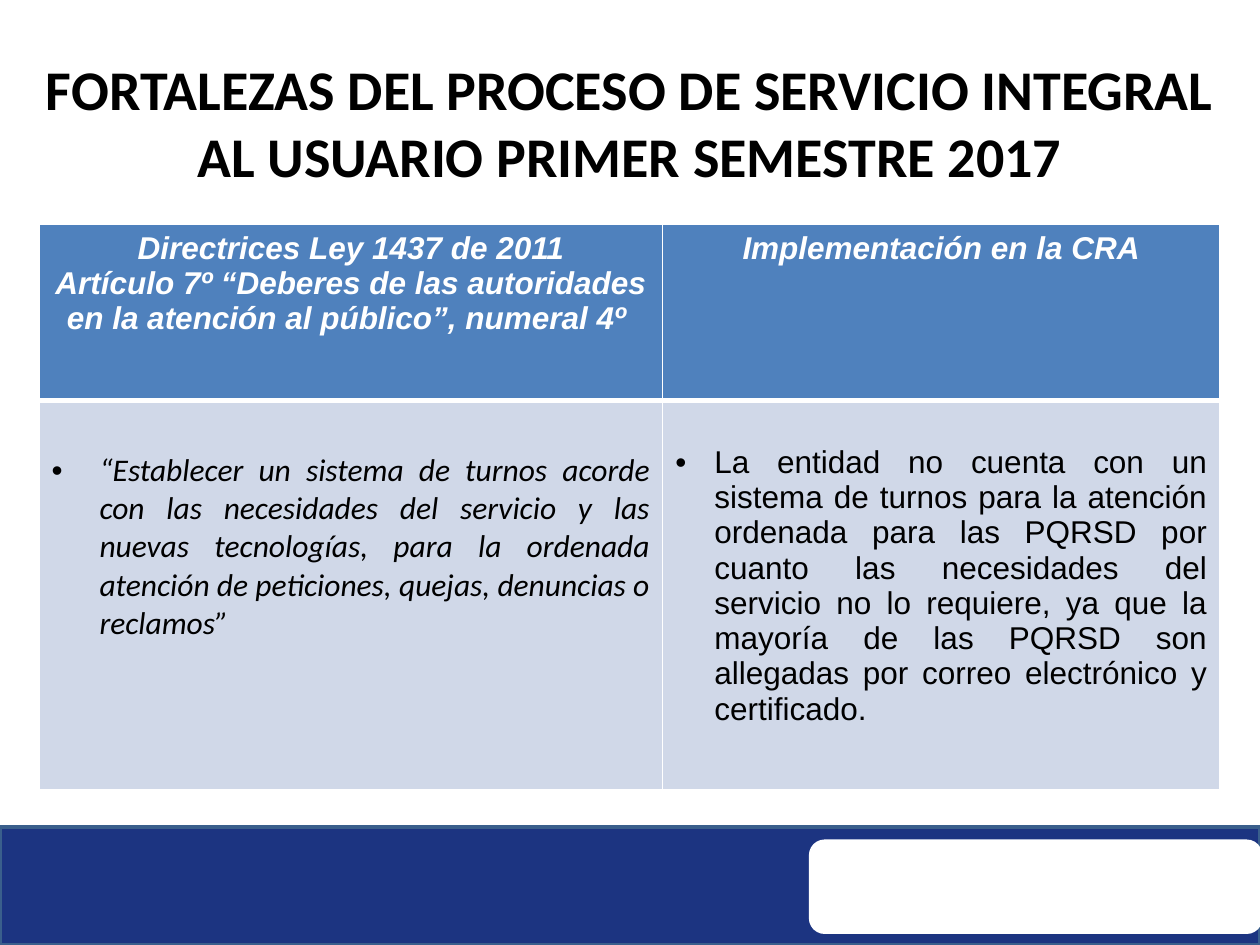
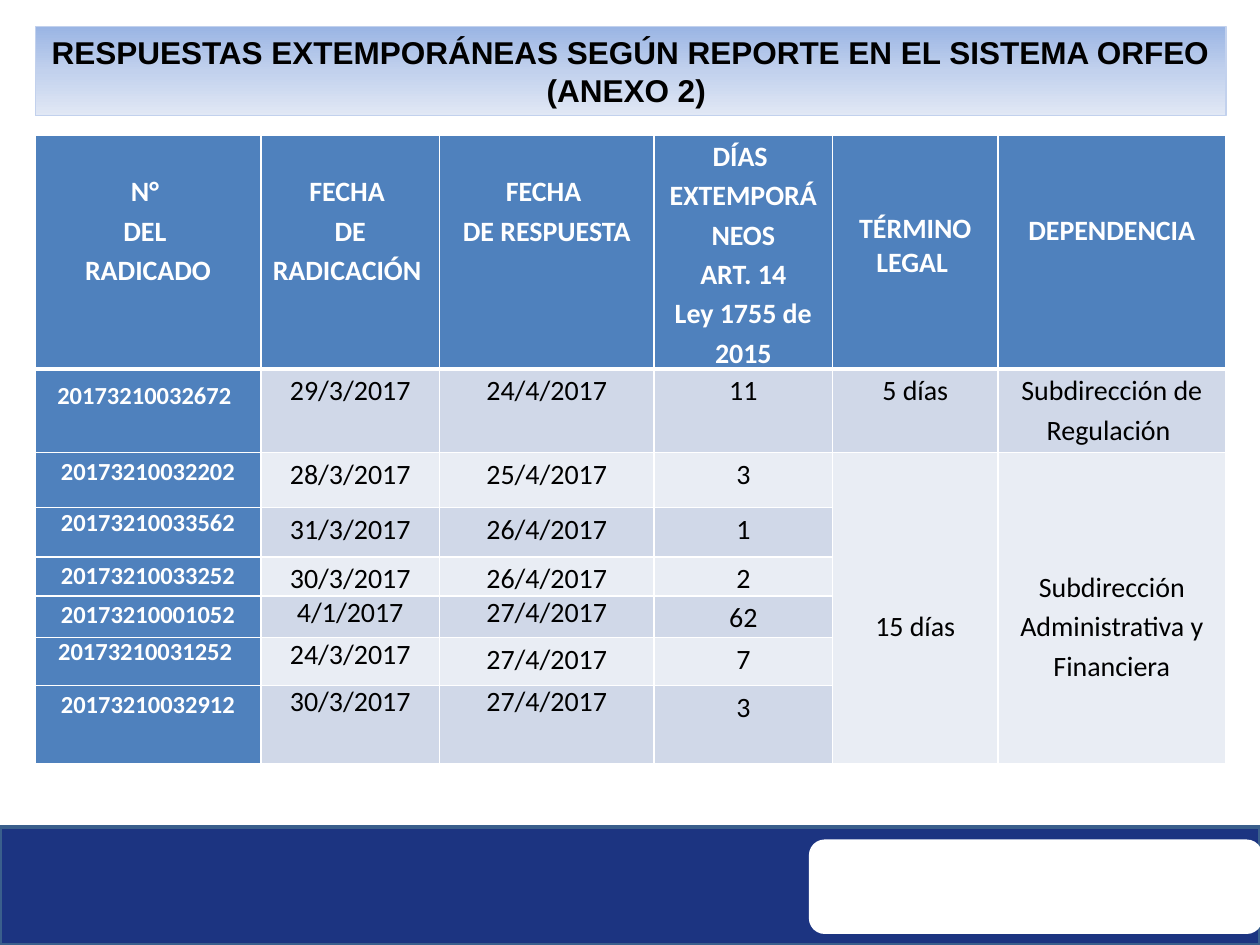
import copy
import pptx
import pptx.dml.color
import pptx.enum.shapes
import pptx.enum.text
import pptx.oxml
import pptx.oxml.ns
import pptx.util

Inches = pptx.util.Inches
Pt = pptx.util.Pt
RGBColor = pptx.dml.color.RGBColor
Shape = pptx.enum.shapes.MSO_SHAPE
Align = pptx.enum.text.PP_ALIGN
Anchor = pptx.enum.text.MSO_ANCHOR
qn = pptx.oxml.ns.qn

WHITE = RGBColor(0xFF, 0xFF, 0xFF)
BLACK = RGBColor(0, 0, 0)
NAVY = RGBColor(0x1C, 0x34, 0x81)
STEEL = RGBColor(0x3A, 0x5F, 0x8C)
BLUE = RGBColor(0x4F, 0x81, 0xBD)
STRIPES = [RGBColor(0xE9, 0xED, 0xF4), RGBColor(0xD0, 0xD8, 0xE8)]
BAND = [(0, RGBColor(0x9A, 0xB5, 0xE4)), (0.5, RGBColor(0xC2, 0xD1, 0xED)),
        (1, RGBColor(0xE1, 0xE8, 0xF5))]

WIDTH, HEIGHT = 10, 7.5
FOOTER_TOP = HEIGHT * 0.875

STRENGTHS_TITLE = ["FORTALEZAS DEL PROCESO DE SERVICIO INTEGRAL AL USUARIO PRIMER SEMESTRE 2017"]
STRENGTHS_HEADS = [
    ["Directrices Ley 1437 de 2011",
     "Artículo 7º “Deberes de las autoridades en la atención al público”, numeral 4º "],
    ["Implementación en la CRA"],
]
STRENGTHS_BODY = [
    dict(lines=["“Establecer un sistema de turnos acorde con las necesidades del servicio y las "
                "nuevas tecnologías, para la ordenada atención de peticiones, quejas, denuncias o "
                "reclamos”"],
         font="Calibri", italic=True, bullet=0.38, top=0.4),
    dict(lines=["La entidad no cuenta con un sistema de turnos para la atención ordenada para las "
                "PQRSD por cuanto las necesidades del servicio no lo requiere, ya que la mayoría "
                "de las PQRSD son allegadas por correo electrónico y certificado."],
         font="Arial", italic=False, bullet=0.31, top=0.35),
]
STRENGTHS_COLUMNS = [4.95, 4.42]
STRENGTHS_ROWS = [1.4, 3.09]

LATE_TITLE = ["RESPUESTAS EXTEMPORÁNEAS SEGÚN REPORTE EN EL SISTEMA ORFEO", "(ANEXO 2) "]
LATE_HEADS = [
    (["N° ", "DEL ", "RADICADO"], 0.28),
    (["FECHA ", "DE RADICACIÓN "], 0.28),
    (["FECHA ", "DE RESPUESTA"], 0.28),
    (["DÍAS ", "EXTEMPORÁNEOS", "ART. 14", "Ley 1755 de 2015"], 0),
    (["TÉRMINO LEGAL "], 0.61),
    (["DEPENDENCIA"], 0.59),
]
LATE_RECORDS = [
    ([("20173210032672", 14), (" ", 18)], "29/3/2017", "24/4/2017", "11", "5 días",
     "Subdirección de Regulación "),
    ("20173210032202", "28/3/2017", "25/4/2017", "3", "15 días",
     "Subdirección Administrativa y Financiera"),
    ("20173210033562", "31/3/2017", "26/4/2017", "1"),
    ("20173210033252", "30/3/2017", "26/4/2017", "2"),
    ("20173210001052", "4/1/2017", "27/4/2017", "62"),
    ("20173210031252 ", "24/3/2017", "27/4/2017", "7"),
    ("20173210032912", "30/3/2017", "27/4/2017", "3"),
]
LATE_COLUMNS = [1.79, 1.42, 1.7, 1.42, 1.31, 1.81]
LATE_ROWS = [1.86, 0.66, 0.44, 0.39, 0.31, 0.33, 0.38, 0.62]
SINGLE_SPACED = {(0, 4), (3, 0), (5, 1), (5, 2), (6, 0), (6, 1), (7, 1), (7, 2)}
MERGED_TOPS = {(2, 4): 1.21, (2, 5): 0.9}


def write(frame, lines, size=18, font="Calibri", color=BLACK, bold=False, italic=False,
          align=Align.CENTER, spacing=None, bullet=None):
    for index, line in enumerate(lines):
        para = frame.paragraphs[0] if index == 0 else frame.add_paragraph()
        para.alignment = align
        if spacing:
            para.line_spacing = spacing
        if bullet:
            add_bullet(para, bullet)
        for text, points in [(line, size)] if isinstance(line, str) else line:
            span = para.add_run()
            span.text = text
            span.font.size = Pt(points)
            span.font.name = font
            span.font.bold = bold
            span.font.italic = italic
            span.font.color.rgb = color


def add_bullet(para, indent):
    properties = para._p.get_or_add_pPr()
    properties.set("marL", str(Inches(indent)))
    properties.set("indent", str(-Inches(indent)))
    for tag, name, value in [("a:buFont", "typeface", "Arial"), ("a:buChar", "char", "•")]:
        mark = pptx.oxml.parse_xml(f'<{tag} {pptx.oxml.ns.nsdecls("a")}/>')
        mark.set(name, value)
        properties.append(mark)


def add_box(page, kind, place, fill=None, line=None, weight=1):
    box = page.shapes.add_shape(kind, *map(Inches, place))
    box.shadow.inherit = False
    if fill is not None:
        box.fill.solid()
        box.fill.fore_color.rgb = fill
    if line is None:
        box.line.fill.background()
    else:
        box.line.color.rgb = line
        box.line.width = Pt(weight)
    box.text_frame.word_wrap = True
    box.text_frame.vertical_anchor = Anchor.MIDDLE
    return box


def add_page(deck):
    page = deck.slides.add_slide(deck.slide_layouts[6])
    add_box(page, Shape.RECTANGLE, (0, FOOTER_TOP, WIDTH, HEIGHT - FOOTER_TOP), NAVY, STEEL, 2)
    add_box(page, Shape.ROUNDED_RECTANGLE, (6.42, FOOTER_TOP + 0.1, 3.6, HEIGHT * 0.1), WHITE)
    return page


def add_grid(page, left, top, columns, rows):
    place = map(Inches, (left, top, sum(columns), sum(rows)))
    table = page.shapes.add_table(len(rows), len(columns), *place).table
    table.first_row = table.horz_banding = False
    for column, width in zip(table.columns, columns):
        column.width = Inches(width)
    for row, height in zip(table.rows, rows):
        row.height = Inches(height)
    return table


def format_cell(cell, row, fill):
    cell.fill.solid()
    cell.fill.fore_color.rgb = fill
    properties = cell._tc.get_or_add_tcPr()
    thick_side = {0: "B", 1: "T"}.get(row)
    for index, side in enumerate("LRTB"):
        weight = Pt(3 if side == thick_side else 1)
        properties.insert(index, pptx.oxml.parse_xml(
            f'<a:ln{side} {pptx.oxml.ns.nsdecls("a")} w="{weight}"><a:solidFill>'
            f'<a:srgbClr val="{WHITE}"/></a:solidFill></a:ln{side}>'))


def build_strengths(deck):
    page = add_page(deck)
    title = page.shapes.add_textbox(0, Inches(0.38), Inches(WIDTH), Inches(1.18))
    title.text_frame.word_wrap = True
    write(title.text_frame, STRENGTHS_TITLE, size=32, bold=True)

    table = add_grid(page, 0.31, 1.78, STRENGTHS_COLUMNS, STRENGTHS_ROWS)
    for column, (head, body) in enumerate(zip(STRENGTHS_HEADS, STRENGTHS_BODY)):
        cell = table.cell(0, column)
        format_cell(cell, 0, BLUE)
        write(cell.text_frame, head, font="Arial", color=WHITE, bold=True, italic=True)
        cell = table.cell(1, column)
        format_cell(cell, 1, STRIPES[1])
        cell.margin_top = Inches(body["top"])
        write(cell.text_frame, body["lines"], font=body["font"], italic=body["italic"],
              align=Align.JUSTIFY, bullet=body["bullet"])


def add_title_band(page):
    band = add_box(page, Shape.RECTANGLE, (0.28, 0.21, sum(LATE_COLUMNS), 0.71),
                   line=BAND[1][1], weight=0.75)
    band.fill.gradient()
    band.fill.gradient_angle = 270
    stops = band._element.spPr.find(".//" + qn("a:gsLst"))
    stops.insert(1, copy.deepcopy(stops[0]))
    for stop, (position, color) in zip(band.fill.gradient_stops, BAND):
        stop.position = position
        stop.color.rgb = color
    write(band.text_frame, LATE_TITLE, font="Arial", bold=True)


def build_late_answers(deck):
    page = add_page(deck)
    table = add_grid(page, 0.28, 1.07, LATE_COLUMNS, LATE_ROWS)
    for row in range(len(LATE_ROWS)):
        for column in range(len(LATE_COLUMNS)):
            cell = table.cell(row, column)
            label = row == 0 or column == 0
            stripe = 0 if column > 3 and row > 1 else row % 2
            format_cell(cell, row, BLUE if label else STRIPES[stripe])
            cell.margin_left = cell.margin_right = Inches(0.07)
            cell.margin_bottom = 0
            if row == 0:
                lines, top = LATE_HEADS[column]
            else:
                lines = LATE_RECORDS[row - 1][column:column + 1]
                top = MERGED_TOPS.get((row, column), 0)
            cell.margin_top = Inches(top)
            write(cell.text_frame, lines, size=14 if row and label else 16,
                  color=WHITE if label else BLACK, bold=label,
                  spacing=None if (row, column) in SINGLE_SPACED else 1.15)
    for row, column in MERGED_TOPS:
        table.cell(row, column).merge(table.cell(len(LATE_ROWS) - 1, column))
    add_title_band(page)


def main():
    deck = pptx.Presentation()
    deck.slide_width = Inches(WIDTH)
    deck.slide_height = Inches(HEIGHT)
    build_strengths(deck)
    build_late_answers(deck)
    deck.save("out.pptx")


if __name__ == "__main__":
    main()
